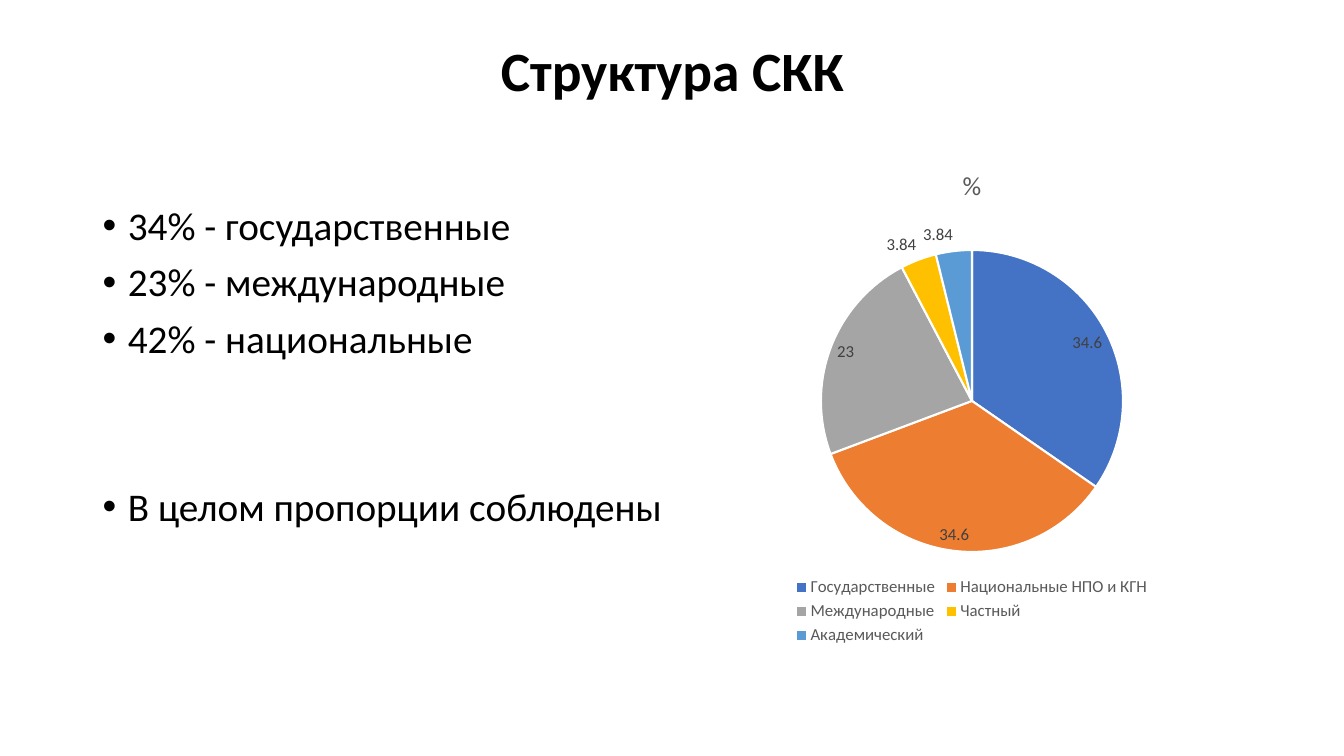
from lxml import etree
from pptx import Presentation, util as u
from pptx.chart.data import CategoryChartData
from pptx.dml.color import RGBColor
from pptx.enum import chart as ch, text as t
from pptx.oxml.ns import qn

PX = 9144  # 100 px to the inch
FONT = "Calibri"
BLACK = RGBColor(0x00, 0x00, 0x00)
WHITE = RGBColor(0xFF, 0xFF, 0xFF)
GREY = RGBColor(0x59, 0x59, 0x59)
DARK = RGBColor(0x40, 0x40, 0x40)
BLUE = RGBColor(0x44, 0x72, 0xC4)
ORANGE = RGBColor(0xED, 0x7D, 0x31)
SILVER = RGBColor(0xA5, 0xA5, 0xA5)
GOLD = RGBColor(0xFF, 0xC0, 0x00)
SKY = RGBColor(0x5B, 0x9B, 0xD5)


def style(font, size, color, bold=False):
    font.name = FONT
    font.size = u.Pt(size)
    font.color.rgb = color
    font.bold = bold


def add_box(x, y, w, h):
    """Add a wrapping text box and return its text frame."""
    box = slide.shapes.add_textbox(x * PX, y * PX, w * PX, h * PX)
    box.text_frame.word_wrap = True
    return box.text_frame


prs = Presentation()
prs.slide_width, prs.slide_height = 1333 * PX, 750 * PX
slide = prs.slides.add_slide(prs.slide_layouts[6])

# Heading
head = add_box(92, 40, 1150, 66)
head.vertical_anchor = t.MSO_ANCHOR.MIDDLE
para = head.paragraphs[0]
para.alignment = t.PP_ALIGN.CENTER
para.line_spacing = 0.9
run = para.add_run()
run.text = "Структура СКК"
style(run.font, 39.6, BLACK, True)

# Pie chart
parts = [
    ("Государственные", 34.6, BLUE),
    ("Национальные НПО и КГН", 34.6, ORANGE),
    ("Международные", 23, SILVER),
    ("Частный", 3.84, GOLD),
    ("Академический", 3.84, SKY),
]
data = CategoryChartData()
data.categories = [name for name, _, _ in parts]
data.add_series("%", [value for _, value, _ in parts])
pie = slide.shapes.add_chart(
    ch.XL_CHART_TYPE.PIE, 667 * PX, 146 * PX, 594 * PX, 498 * PX, data).chart
style(pie.font, 12, GREY)

pie.has_title = True
run = pie.chart_title.text_frame.paragraphs[0].add_run()
run.text = "%"
style(run.font, 18.6, GREY)

pie.has_legend = True
pie.legend.position = ch.XL_LEGEND_POSITION.BOTTOM
pie.legend.include_in_layout = False
style(pie.legend.font, 12, GREY)

plot = pie.plots[0]
plot.vary_by_categories = True
plot.has_data_labels = True
labels = plot.data_labels
labels.show_value = True
labels.position = ch.XL_LABEL_POSITION.BEST_FIT
style(labels.font, 12, DARK)

for i, (_, _, color) in enumerate(parts):
    form = plot.series[0].points[i].format
    form.fill.solid()
    form.fill.fore_color.rgb = color
    form.line.color.rgb = WHITE
    form.line.width = u.Pt(1.5)

# Bullets, each with its space before in points
items = [
    ("34% - государственные", 10),
    ("23% - международные", 10),
    ("42% - национальные", 10),
    ("В целом пропорции соблюдены", 90),
]
body = add_box(92, 200, 1150, 476)
for i, (words, gap) in enumerate(items):
    para = body.add_paragraph() if i else body.paragraphs[0]
    para.line_spacing = 0.9
    para.space_before = u.Pt(gap)
    run = para.add_run()
    run.text = words
    style(run.font, 28, BLACK)
    props = para._p.get_or_add_pPr()
    props.set("marL", str(25 * PX))
    props.set("indent", str(-25 * PX))
    etree.SubElement(props, qn("a:buFont"), typeface="Arial")
    etree.SubElement(props, qn("a:buChar"), char="•")

prs.save("out.pptx")
